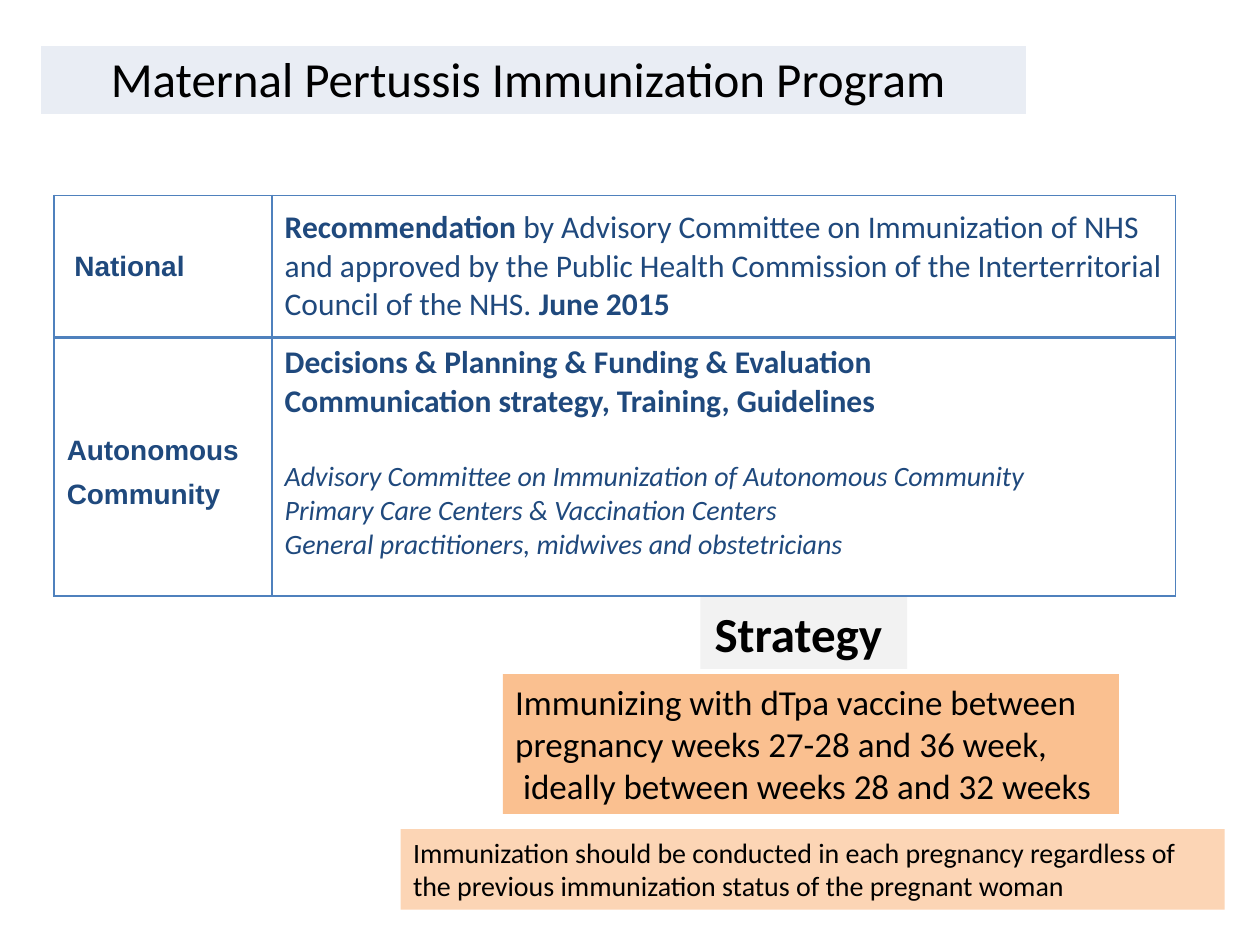
from lxml import etree
from pptx import Presentation
from pptx.dml.color import RGBColor
from pptx.enum import shapes, text
from pptx.oxml import ns
from pptx.util import Inches, Pt

BLACK = RGBColor(0x00, 0x00, 0x00)
NAVY = RGBColor(0x1F, 0x49, 0x7D)
BLUE = RGBColor(0x4F, 0x81, 0xBD)
WHITE = RGBColor(0xFF, 0xFF, 0xFF)
PALE_BLUE = RGBColor(0xE9, 0xED, 0xF4)
PALE_GRAY = RGBColor(0xF2, 0xF2, 0xF2)
ORANGE = RGBColor(0xFA, 0xC0, 0x90)
PALE_ORANGE = RGBColor(0xFC, 0xD5, 0xB5)


def add_run(paragraph, words, size, color, font="Calibri", bold=False, italic=False):
    run = paragraph.add_run()
    run.text = words
    run.font.name = font
    run.font.size = Pt(size)
    run.font.bold = bold
    run.font.italic = italic
    run.font.color.rgb = color


def add_paragraph(frame, is_first):
    return frame.paragraphs[0] if is_first else frame.add_paragraph()


def set_borders(cell, color, left=1, right=1, top=1, bottom=1):
    """Put border lines, with widths in points, ahead of the cell's fill."""
    properties = cell._tc.get_or_add_tcPr()
    sides = (("a:lnL", left), ("a:lnR", right), ("a:lnT", top), ("a:lnB", bottom))
    for position, (tag, width) in enumerate(sides):
        line = etree.Element(ns.qn(tag), w=str(Pt(width)))
        fill = etree.SubElement(line, ns.qn("a:solidFill"))
        etree.SubElement(fill, ns.qn("a:srgbClr"), val=str(color))
        properties.insert(position, line)


def add_table(slide, left, top, widths, heights, fill):
    table = slide.shapes.add_table(
        len(heights), len(widths), Inches(left), Inches(top),
        Inches(sum(widths)), Inches(sum(heights))).table
    table.first_row = table.horz_banding = False
    for column, width in zip(table.columns, widths):
        column.width = Inches(width)
    for row, height in zip(table.rows, heights):
        row.height = Inches(height)
    for cell in table.iter_cells():
        cell.vertical_anchor = text.MSO_ANCHOR.MIDDLE
        if fill is None:
            cell.fill.background()
        else:
            cell.fill.solid()
            cell.fill.fore_color.rgb = fill
    return table


def add_heading(slide):
    cell = add_table(slide, 0.32, 0.36, [7.83], [0.55], PALE_BLUE).cell(0, 0)
    cell.margin_left = cell.margin_right = cell.margin_top = Inches(0.01)
    cell.margin_bottom = 0
    set_borders(cell, WHITE)
    paragraph = cell.text_frame.paragraphs[0]
    paragraph.alignment = text.PP_ALIGN.CENTER
    add_run(paragraph, "Maternal Pertussis Immunization Program ", 28, BLACK)


def add_responsibilities(slide):
    table = add_table(slide, 0.43, 1.55, [1.73, 7.17], [1.13, 2.05], None)
    for column in range(2):
        set_borders(table.cell(0, column), BLUE, bottom=2)
        set_borders(table.cell(1, column), BLUE, top=2)

    for row, level in enumerate((" National", "Autonomous Community")):
        paragraph = table.cell(row, 0).text_frame.paragraphs[0]
        add_run(paragraph, level, 16, NAVY, font="Arial", bold=True)
    paragraph.line_spacing = Pt(25)

    paragraph = table.cell(0, 1).text_frame.paragraphs[0]
    for words, bold in (
            ("Recommendation", True),
            (" by Advisory Committee on Immunization of NHS and approved by the Public "
             "Health Commission of the Interterritorial Council of the NHS. ", False),
            ("June 2015", True)):
        add_run(paragraph, words, 18, NAVY, bold=bold)

    tasks = ("Decisions & Planning & Funding & Evaluation",
             "Communication strategy, Training, Guidelines")
    actors = ("Advisory Committee on Immunization of Autonomous Community",
              "Primary Care Centers & Vaccination Centers",
              "General practitioners, midwives and obstetricians")
    cell = table.cell(1, 1)
    cell.vertical_anchor = text.MSO_ANCHOR.TOP
    for index, words in enumerate(tasks):
        paragraph = add_paragraph(cell.text_frame, index == 0)
        add_run(paragraph, words, 18, NAVY, bold=True)
    for index, words in enumerate(actors):
        paragraph = add_paragraph(cell.text_frame, False)
        if index == 0:
            paragraph.space_before = Pt(22)
        add_run(paragraph, words, 16, NAVY, italic=True)


def add_box(slide, bounds, fill, lines, size, bold=False, wrap=True,
            alignment=text.PP_ALIGN.LEFT):
    box = slide.shapes.add_shape(
        shapes.MSO_SHAPE.RECTANGLE, *(Inches(length) for length in bounds))
    box.shadow.inherit = False
    box.fill.solid()
    box.fill.fore_color.rgb = fill
    box.line.fill.background()
    frame = box.text_frame
    frame.word_wrap = wrap
    frame.auto_size = text.MSO_AUTO_SIZE.SHAPE_TO_FIT_TEXT
    frame.vertical_anchor = text.MSO_ANCHOR.TOP
    for index, line in enumerate(lines):
        paragraph = add_paragraph(frame, index == 0)
        paragraph.alignment = alignment
        add_run(paragraph, line, size, BLACK, bold=bold)


def main():
    presentation = Presentation()
    presentation.slide_width = Inches(10)
    presentation.slide_height = Inches(7.5)
    slide = presentation.slides.add_slide(presentation.slide_layouts[6])

    add_heading(slide)
    add_responsibilities(slide)
    add_box(slide, (3.99, 5.35, 4.89, 1.11), ORANGE,
            ["Immunizing with dTpa vaccine between pregnancy weeks 27-28 and 36 week,",
             " ideally between weeks 28 and 32 weeks"], 20)
    add_box(slide, (5.56, 4.74, 1.64, 0.57), PALE_GRAY, ["Strategy "], 28,
            bold=True, wrap=False, alignment=text.PP_ALIGN.CENTER)
    add_box(slide, (3.18, 6.58, 6.54, 0.64), PALE_ORANGE,
            ["Immunization should be conducted in each pregnancy regardless of the "
             "previous immunization status of the pregnant woman"], 16)

    presentation.save("out.pptx")


if __name__ == "__main__":
    main()
